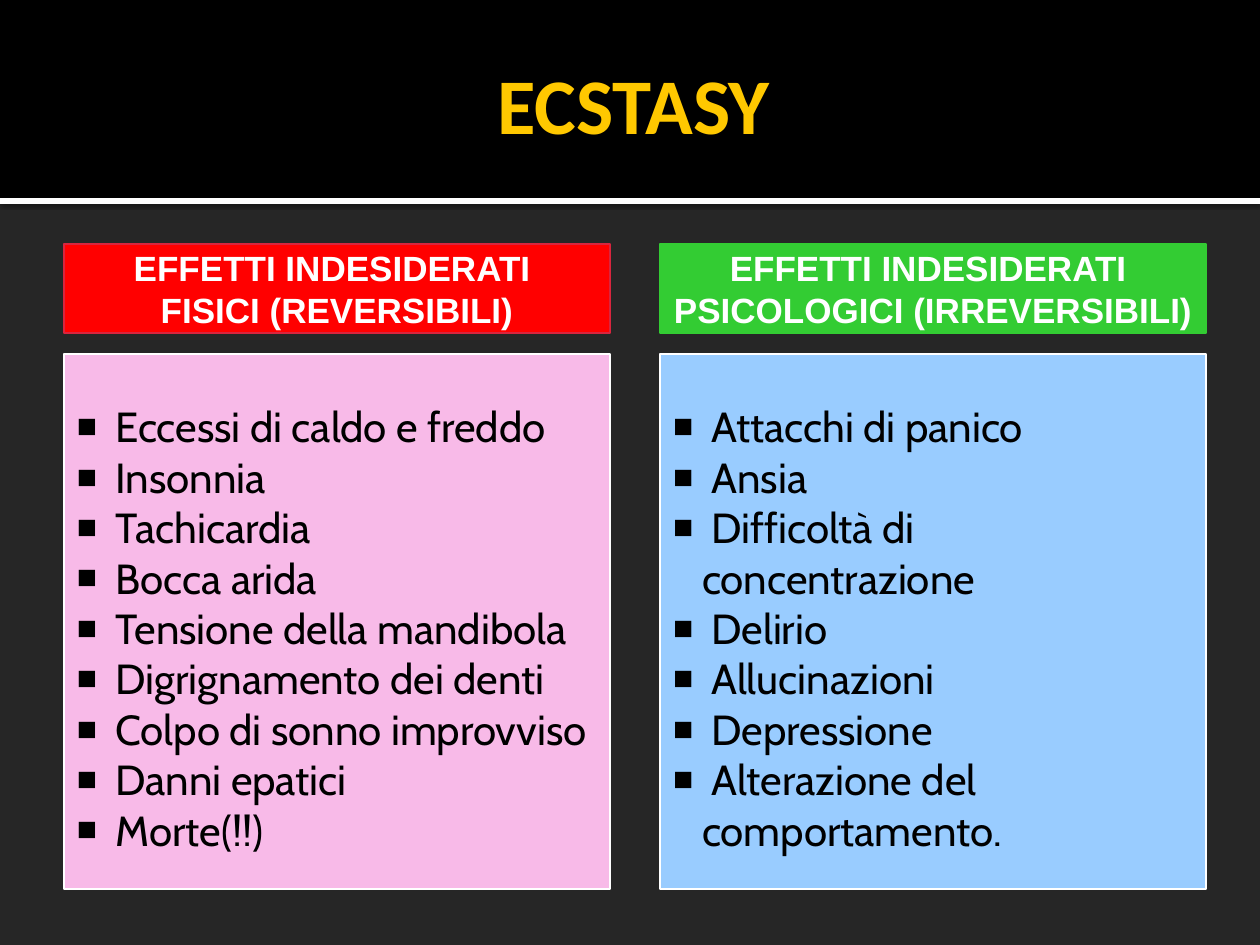
from lxml import etree
from pptx import Presentation
from pptx.dml.color import RGBColor
from pptx.enum.shapes import MSO_SHAPE
from pptx.enum.text import MSO_ANCHOR, PP_ALIGN
from pptx.oxml import parse_xml
from pptx.oxml.ns import nsdecls, qn
from pptx.util import Emu, Pt

WHITE = RGBColor(0xFF, 0xFF, 0xFF)
BLACK = RGBColor(0x00, 0x00, 0x00)
CHARCOAL = RGBColor(0x26, 0x26, 0x26)
GOLD = RGBColor(0xFF, 0xC8, 0x00)
RED = RGBColor(0xFF, 0x00, 0x00)
CRIMSON = RGBColor(0xD9, 0x25, 0x3E)
GREEN = RGBColor(0x33, 0xCC, 0x33)
PINK = RGBColor(0xF8, 0xBA, 0xE8)
LIGHT_BLUE = RGBColor(0x99, 0xCC, 0xFF)

COLUMN_LEFT, COLUMN_STEP, COLUMN_WIDTH = 64, 596, 546
BULLET_INDENT = 29

COLUMNS = [
    (["EFFETTI INDESIDERATI ", "FISICI (REVERSIBILI)"], RED, CRIMSON, PINK,
     ["Eccessi di caldo e freddo", "Insonnia", "Tachicardia", "Bocca arida",
      "Tensione della mandibola", "Digrignamento dei denti",
      "Colpo di sonno improvviso", "Danni epatici", "Morte(!!)"]),
    (["EFFETTI INDESIDERATI ", "PSICOLOGICI (IRREVERSIBILI)"], GREEN, GREEN, LIGHT_BLUE,
     ["Attacchi di panico", "Ansia", "Difficoltà di concentrazione", "Delirio",
      "Allucinazioni", "Depressione", "Alterazione del comportamento."]),
]


def px(length):
    return Emu(round(length * 914400 / 126))


def add_box(slide, left, top, width, height, fill, line=None):
    shape = slide.shapes.add_shape(
        MSO_SHAPE.RECTANGLE, px(left), px(top), px(width), px(height))
    shape.shadow.inherit = False
    shape.fill.solid()
    shape.fill.fore_color.rgb = fill
    if line is None:
        shape.line.fill.background()
    else:
        shape.line.color.rgb = line
        shape.line.width = Pt(0.75)
    return shape


def add_soft_shadow(shape):
    effects = shape._element.spPr.find(qn("a:effectLst"))
    effects.append(parse_xml(
        f'<a:outerShdw {nsdecls("a")} blurRad="{Pt(2.5)}" dist="{Pt(0.8)}" dir="5400000">'
        '<a:srgbClr val="000000"><a:alpha val="60000"/></a:srgbClr></a:outerShdw>'))


def add_bullet(paragraph):
    properties = paragraph._p.get_or_add_pPr()
    properties.set("marL", str(px(BULLET_INDENT)))
    properties.set("indent", str(-px(BULLET_INDENT)))
    etree.SubElement(properties, qn("a:buSzPct")).set("val", "80000")
    etree.SubElement(properties, qn("a:buFont")).set("typeface", "Arial")
    etree.SubElement(properties, qn("a:buChar")).set("char", "■")


def write_text(shape, lines, *, font, size, color, bold=False, align=PP_ALIGN.CENTER,
               anchor=MSO_ANCHOR.MIDDLE, wrap=True, bullets=False, insets=(13, 6, 13, 6)):
    """Fill the shape with one paragraph per line; insets are left, top, right, bottom."""
    frame = shape.text_frame
    frame.word_wrap = wrap
    frame.vertical_anchor = anchor
    (frame.margin_left, frame.margin_top,
     frame.margin_right, frame.margin_bottom) = map(px, insets)
    for index, line in enumerate(lines):
        paragraph = frame.add_paragraph() if index else frame.paragraphs[0]
        paragraph.alignment = align
        if bullets:
            add_bullet(paragraph)
        run = paragraph.add_run()
        run.text = line
        run.font.name = font
        run.font.size = Pt(size)
        run.font.bold = bold
        run.font.color.rgb = color


def add_header(slide):
    add_soft_shadow(add_box(slide, 0, 198, 1260, 6, WHITE))
    add_box(slide, 0, 0, 1260, 198, BLACK)
    title = slide.shapes.add_textbox(px(63), px(16), px(1134), px(173))
    write_text(title, ["ECSTASY"], font="Calibri", size=45, color=GOLD, bold=True,
               insets=(13, 6, 6, 6))


def add_column(slide, left, heading, fill, line, list_fill, effects):
    heading_box = add_box(slide, left, 244, COLUMN_WIDTH, 89, fill, line)
    write_text(heading_box, heading, font="Arial", size=20, color=WHITE, bold=True, wrap=False)
    list_box = add_box(slide, left, 354, COLUMN_WIDTH, 535, list_fill, WHITE)
    # The leading space sets first lines slightly right of wrapped ones.
    write_text(list_box, [f" {effect}" for effect in effects], font="Cabin", size=24,
               color=BLACK, align=PP_ALIGN.LEFT, anchor=MSO_ANCHOR.TOP, bullets=True,
               insets=(13, 47, 16, 6))


def main():
    presentation = Presentation()
    presentation.slide_width, presentation.slide_height = px(1260), px(945)
    slide = presentation.slides.add_slide(presentation.slide_layouts[6])
    slide.background.fill.solid()
    slide.background.fill.fore_color.rgb = CHARCOAL
    add_header(slide)
    for index, column in enumerate(COLUMNS):
        add_column(slide, COLUMN_LEFT + index * COLUMN_STEP, *column)
    presentation.save("out.pptx")


if __name__ == "__main__":
    main()
